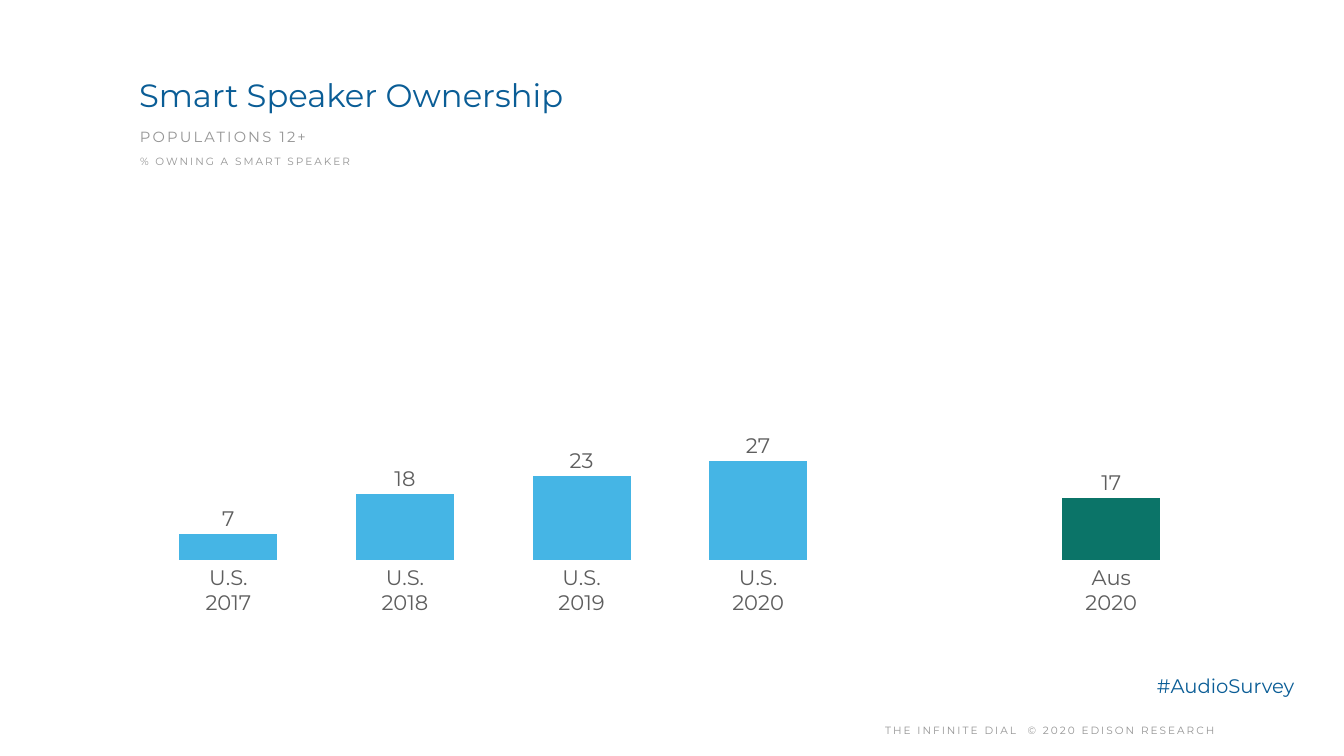
from lxml import etree
from pptx import Presentation
from pptx.chart.data import CategoryChartData
from pptx.dml.color import RGBColor
from pptx.enum.chart import (XL_CHART_TYPE, XL_LABEL_POSITION as LabelPos,
                             XL_TICK_LABEL_POSITION as TickPos, XL_TICK_MARK as Tick)
from pptx.enum.text import MSO_ANCHOR as Anchor, PP_ALIGN as Align
from pptx.oxml import parse_xml
from pptx.util import Pt

PX = 18143  # EMU per px
FONT = "Montserrat"
BLUE, GRAY, DARK = "0A5D96", "959595", "5E5E5E"
SKY, GREEN = "45B5E5", "0B7468"


def style(font, size, color):
    font.name, font.size, font.bold = FONT, Pt(size), False
    font.color.rgb = RGBColor.from_string(color)


def write(shape, box, text, size, color, anchor=Anchor.TOP, align=Align.LEFT,
          line=None, spacing=0):
    """Place a text shape and fill it; spacing is in hundredths of a point."""
    shape.left, shape.top, shape.width, shape.height = [n * PX for n in box]
    frame = shape.text_frame
    frame.word_wrap = True
    frame.vertical_anchor = anchor
    frame.margin_left = frame.margin_right = 4 * PX
    frame.margin_top = frame.margin_bottom = 4 * PX
    paragraph = frame.paragraphs[0]
    paragraph.alignment = align
    paragraph.line_spacing = line
    run = paragraph.add_run()
    run.text = text
    style(run.font, size, color)
    if spacing:
        run._r.get_or_add_rPr().set("spc", str(spacing))


prs = Presentation()
prs.slide_width, prs.slide_height = 1344 * PX, 756 * PX
slide = prs.slides.add_slide(prs.slide_layouts[5])
shapes = slide.shapes

# Heading
write(shapes.title, (135, 71, 1093, 62), "Smart Speaker Ownership", 46, BLUE)

# Ownership chart
data = CategoryChartData(number_format="#,##0")
data.categories = ["U.S.\n2017", "U.S.\n2018", "U.S.\n2019", "U.S.\n2020", "", "Aus\n2020"]
data.add_series("Series 1", (7, 18, 23, 27, None, 17))
chart = shapes.add_chart(XL_CHART_TYPE.COLUMN_CLUSTERED,
                         125 * PX, 133 * PX, 1080 * PX, 494 * PX, data).chart
chart.has_legend = chart.has_title = False
style(chart.font, 10, GRAY)

years = chart.category_axis
years.major_tick_mark = years.minor_tick_mark = Tick.NONE
years.tick_label_position = TickPos.LOW
years.format.line.fill.background()
style(years.tick_labels.font, 30, DARK)

percent = chart.value_axis
percent.minimum_scale, percent.maximum_scale, percent.major_unit = 0, 100, 20
percent.has_major_gridlines = False
percent.visible = False

plot = chart.plots[0]
plot.gap_width, plot.overlap, plot.vary_by_categories = 80, -10, False
owners = plot.series[0]
owners.format.fill.solid()
owners.format.fill.fore_color.rgb = RGBColor.from_string(SKY)
australia = owners.points[5].format.fill
australia.solid()
australia.fore_color.rgb = RGBColor.from_string(GREEN)

labels = owners.data_labels
labels.show_value = True
labels.position = LabelPos.OUTSIDE_END
labels.number_format, labels.number_format_is_linked = "#,##0", False
style(labels.font, 30, DARK)

# Fixed inner plot area
C = "http://schemas.openxmlformats.org/drawingml/2006/chart"
plot_area = chart._chartSpace.chart.plotArea
for old in plot_area.findall(f"{{{C}}}layout"):
    plot_area.remove(old)
layout = parse_xml(f'<c:layout xmlns:c="{C}"><c:manualLayout/></c:layout>')
for tag, value in (("layoutTarget", "inner"), ("xMode", "edge"), ("yMode", "edge"),
                   ("x", "0.014"), ("y", "0.123"), ("w", "0.981"), ("h", "0.741")):
    etree.SubElement(layout[0], f"{{{C}}}{tag}").set("val", value)
plot_area.insert(0, layout)

# Subtitles, hashtag and footer
for box, text, size, color, anchor, align, line, spacing in (
    ((136, 121, 1137, 28), "POPULATIONS 12+", 21, GRAY, Anchor.MIDDLE, Align.LEFT, 1.2, 310),
    ((136, 149, 622, 23), "% OWNING A SMART SPEAKER", 15, GRAY, Anchor.MIDDLE, Align.LEFT, 1.2, 290),
    ((1153, 668, 166, 34), "#AudioSurvey", 28, BLUE, Anchor.TOP, Align.LEFT, 1.1, 0),
    ((753, 716, 594, 27), "THE INFINITE DIAL  © 2020 EDISON RESEARCH", 15, GRAY,
     Anchor.MIDDLE, Align.CENTER, 1.2, 290),
):
    write(shapes.add_textbox(0, 0, 0, 0), box, text, size, color, anchor, align, line, spacing)

prs.save("out.pptx")
